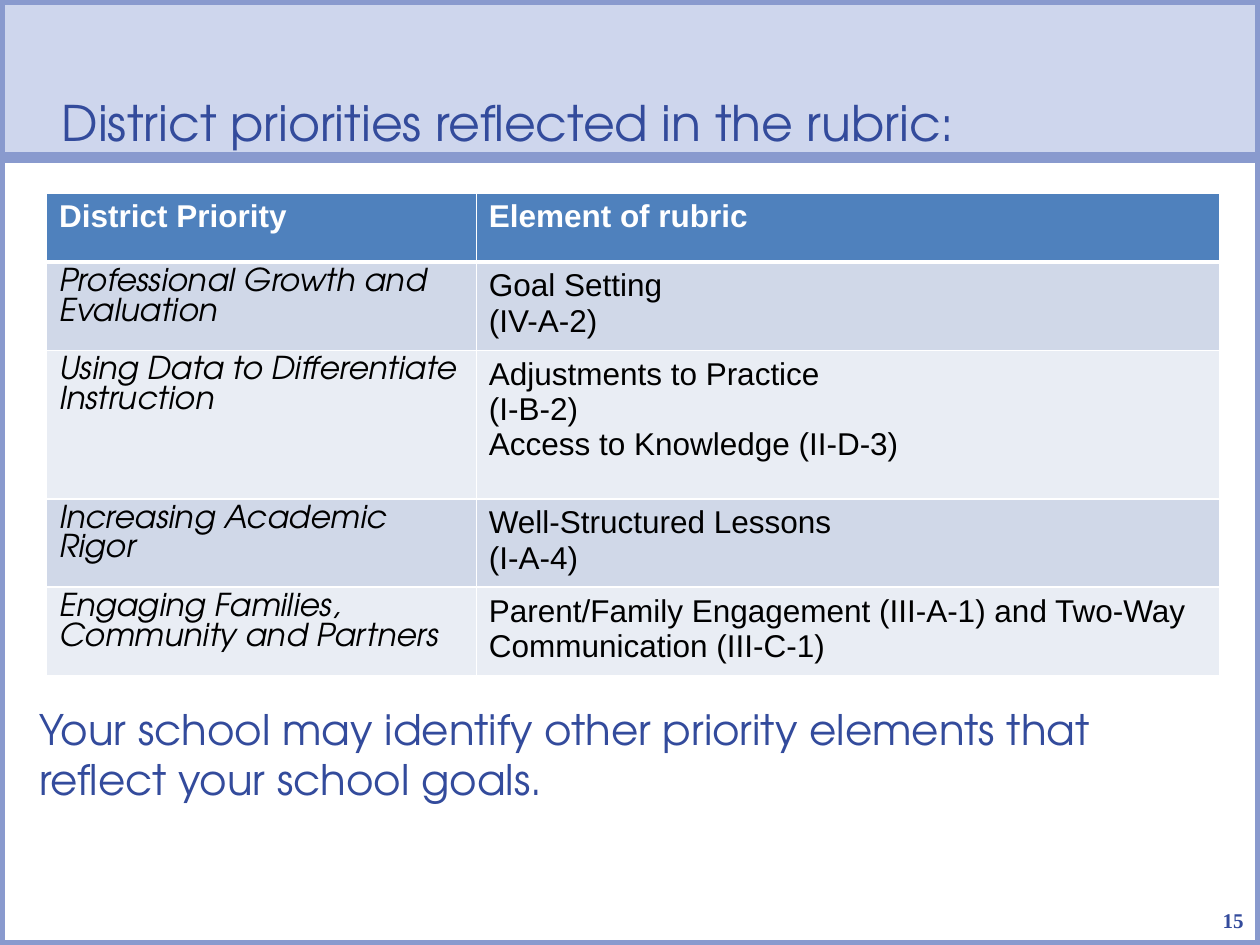
from lxml.etree import SubElement
from pptx import Presentation
from pptx.dml.color import RGBColor
from pptx.enum.shapes import MSO_SHAPE
from pptx.enum.text import MSO_ANCHOR, MSO_AUTO_SIZE, PP_ALIGN
from pptx.oxml.ns import qn
from pptx.util import Inches, Pt

NAVY = RGBColor(0x33, 0x4B, 0x9C)
FRAME = RGBColor(0x89, 0x9A, 0xCE)
BAND = RGBColor(0xCE, 0xD6, 0xED)
HEADER = RGBColor(0x4F, 0x81, 0xBD)
ODD = RGBColor(0xD0, 0xD8, 0xE8)
EVEN = RGBColor(0xE9, 0xED, 0xF4)
WHITE = RGBColor(0xFF, 0xFF, 0xFF)
BLACK = RGBColor(0, 0, 0)
DISPLAY = "TeX Gyre Adventor"

COLUMNS = [3.41, 5.9]
ROWS = [
    (0.55, "District Priority", ["Element of rubric"]),
    (0.7, "Professional Growth and Evaluation", ["Goal Setting", "(IV-A-2)"]),
    (1.18, "Using Data to Differentiate Instruction",
     ["Adjustments to Practice", "(I-B-2)", "Access to Knowledge (II-D-3)"]),
    (0.7, "Increasing Academic Rigor", ["Well-Structured Lessons", "(I-A-4)"]),
    (0.7, "Engaging Families, Community and Partners",
     ["Parent/Family Engagement (III-A-1) and Two-Way Communication (III-C-1)"]),
]


def write(tf, lines, size=18, font="Arial", color=BLACK, bold=False,
          italic=False, align=PP_ALIGN.LEFT):
    for i, line in enumerate(lines):
        p = tf.add_paragraph() if i else tf.paragraphs[0]
        p.alignment = align
        r = p.add_run()
        r.text = line
        r.font.size = Pt(size)
        r.font.name = font
        r.font.color.rgb = color
        r.font.bold = bold
        r.font.italic = italic


def set_frame(tf, anchor, left=0, top=0, right=0, bottom=0):
    tf.word_wrap = True
    tf.auto_size = MSO_AUTO_SIZE.NONE
    tf.vertical_anchor = anchor
    tf.margin_left, tf.margin_top = Inches(left), Inches(top)
    tf.margin_right, tf.margin_bottom = Inches(right), Inches(bottom)


def outline(sp):
    sp.line.color.rgb = FRAME
    sp.line.width = Pt(6)


def add_border(s):
    sp = s.shapes.add_shape(MSO_SHAPE.RECTANGLE, Inches(0), Inches(1.25),
                            Inches(10), Inches(6.25))
    sp.shadow.inherit = False
    sp.fill.background()
    outline(sp)


def add_title(s, text):
    sp = s.shapes.title
    sp.left, sp.top = Inches(0), Inches(0)
    sp.width, sp.height = Inches(10), Inches(1.25)
    sp.fill.solid()
    sp.fill.fore_color.rgb = BAND
    outline(sp)
    set_frame(sp.text_frame, MSO_ANCHOR.BOTTOM, left=0.49, right=0.5, bottom=0.05)
    write(sp.text_frame, [text], size=28, font=DISPLAY, color=NAVY)


def add_text(s, text, left, top, width, height, anchor=MSO_ANCHOR.TOP, **style):
    sp = s.shapes.add_textbox(Inches(left), Inches(top), Inches(width), Inches(height))
    set_frame(sp.text_frame, anchor)
    write(sp.text_frame, [text], color=NAVY, **style)


def style_cell(cell, fill, bottom, top):
    cell.fill.solid()
    cell.fill.fore_color.rgb = fill
    tcPr = cell._tc.get_or_add_tcPr()
    widths = [("a:lnL", 1), ("a:lnR", 1), ("a:lnT", top), ("a:lnB", bottom)]
    for i, (tag, width) in enumerate(widths):
        ln = SubElement(tcPr, qn(tag), w=str(Pt(width)))
        SubElement(SubElement(ln, qn("a:solidFill")), qn("a:srgbClr"), val=str(WHITE))
        tcPr.insert(i, ln)


def add_priorities(s):
    total = sum(row[0] for row in ROWS)
    table = s.shapes.add_table(len(ROWS), len(COLUMNS), Inches(0.37), Inches(1.53),
                               Inches(sum(COLUMNS)), Inches(total)).table
    for column, width in zip(table.columns, COLUMNS):
        column.width = Inches(width)
    for i, (height, priority, elements) in enumerate(ROWS):
        table.rows[i].height = Inches(height)
        fill = HEADER if i == 0 else ODD if i % 2 else EVEN
        left, right = table.cell(i, 0), table.cell(i, 1)
        for cell in (left, right):
            style_cell(cell, fill, bottom=1 if i else 3, top=3 if i == 1 else 1)
        if i == 0:
            write(left.text_frame, [priority], color=WHITE, bold=True)
            write(right.text_frame, elements, color=WHITE, bold=True)
        else:
            write(left.text_frame, [priority], font=DISPLAY, italic=True)
            write(right.text_frame, elements)


def main():
    prs = Presentation()
    prs.slide_width, prs.slide_height = Inches(10), Inches(7.5)
    s = prs.slides.add_slide(prs.slide_layouts[5])
    add_border(s)
    add_title(s, "District priorities reflected in the rubric:")
    add_text(s, "Your school may identify other priority elements that reflect your school goals.",
             0.31, 5.58, 8.98, 1.8, size=24, font=DISPLAY)
    add_text(s, "15", 9.6, 7, 0.27, 0.4, anchor=MSO_ANCHOR.BOTTOM, size=12,
             font="Times New Roman", bold=True, align=PP_ALIGN.RIGHT)
    add_priorities(s)
    prs.save("out.pptx")


if __name__ == "__main__":
    main()
